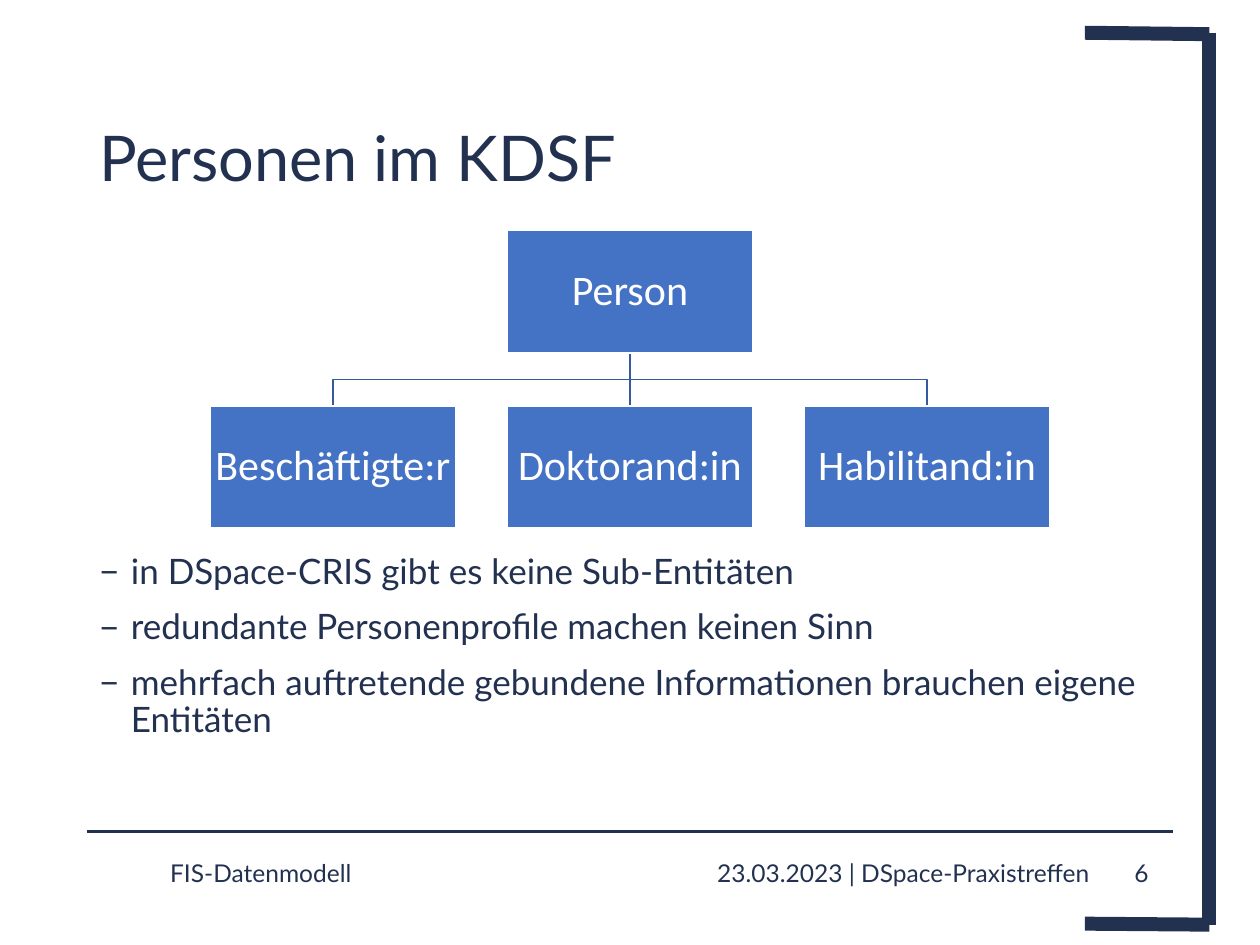
import pptx
import pptx.util
import pptx.dml.color
import pptx.enum.shapes
import pptx.enum.text
import pptx.oxml.ns
import lxml.etree
from dataclasses import dataclass

Cm = pptx.util.Cm
Pt = pptx.util.Pt
RGB = pptx.dml.color.RGBColor.from_string
qn = pptx.oxml.ns.qn
ALIGN = pptx.enum.text.PP_ALIGN
ANCHOR = pptx.enum.text.MSO_ANCHOR


@dataclass(frozen=True)
class Theme:
    navy: str = "233150"
    box: str = "4472C4"
    branch: str = "365B9D"
    white: str = "FFFFFF"
    font: str = "Lato"
    box_font: str = "Calibri"
    title: int = 36
    box_text: int = 24
    body: int = 20
    footer: int = 14


theme = Theme()
prs = pptx.Presentation()
prs.slide_width = Cm(25.4)
prs.slide_height = Cm(19.05)
s = prs.slides.add_slide(prs.slide_layouts[6])


def add_line(x1, y1, x2, y2, color, width):
    ln = s.shapes.add_connector(
        pptx.enum.shapes.MSO_CONNECTOR.STRAIGHT, Cm(x1), Cm(y1), Cm(x2), Cm(y2))
    ln.line.color.rgb = RGB(color)
    ln.line.width = Pt(width)
    lxml.etree.SubElement(ln._element.spPr, qn("a:effectLst"))


def add_run(p, text, size, font=theme.font, color=theme.navy):
    r = p.add_run()
    r.text = text
    r.font.size = Pt(size)
    r.font.name = font
    r.font.color.rgb = RGB(color)


for x1, y1, x2, y2 in [(24.38, 0.66, 24.38, 18.64),
                       (21.87, 0.66, 24.38, 0.69),
                       (21.87, 18.62, 24.38, 18.64)]:
    add_line(x1, y1, x2, y2, theme.navy, 8)
add_line(1.75, 16.76, 23.65, 16.76, theme.navy, 2)

tf = s.shapes.add_textbox(Cm(1.75), Cm(1.04), Cm(21.9), Cm(3.02)).text_frame
tf.word_wrap = True
tf.vertical_anchor = ANCHOR.BOTTOM
p = tf.paragraphs[0]
p.line_spacing = 0.9
add_run(p, "Personen im KDSF", theme.title)

points = ["in DSpace-CRIS gibt es keine Sub-Entitäten",
          "redundante Personenprofile machen keinen Sinn",
          "mehrfach auftretende gebundene Informationen brauchen eigene Entitäten"]
tf = s.shapes.add_textbox(Cm(1.75), Cm(11.05), Cm(21.9), Cm(5.49)).text_frame
tf.word_wrap = True
for i, text in enumerate(points):
    p = tf.add_paragraph() if i else tf.paragraphs[0]
    pPr = p._p.get_or_add_pPr()
    pPr.set("marL", str(Cm(0.64)))
    pPr.set("indent", str(-Cm(0.64)))
    lxml.etree.SubElement(pPr, qn("a:buFont"), typeface=theme.font)
    lxml.etree.SubElement(pPr, qn("a:buChar"), char="−")
    p.line_spacing = 0.9
    if i:
        p.space_before = Pt(10)
    add_run(p, text, theme.body)

footers = [("23.03.2023 | DSpace-Praxistreffen", 13.08, 9.14, ALIGN.RIGHT),
           ("FIS-Datenmodell", 3.18, 9.17, ALIGN.LEFT),
           ("6", 22.5, 1.02, ALIGN.CENTER)]
for text, x, w, align in footers:
    tf = s.shapes.add_textbox(Cm(x), Cm(17.09), Cm(w), Cm(1.02)).text_frame
    tf.word_wrap = True
    tf.vertical_anchor = ANCHOR.MIDDLE
    p = tf.paragraphs[0]
    p.alignment = align
    add_run(p, text, theme.footer)

center, step = 12.7, 5.99
box_w, box_h = 4.95, 2.46
root_y, child_y = 4.65, 8.18
branch_y, bend_y = 7.14, 7.65

for x in (center + step, center - step):
    fb = s.shapes.build_freeform(Cm(center), Cm(branch_y))
    fb.add_line_segments([(Cm(center), Cm(bend_y)), (Cm(x), Cm(bend_y)),
                          (Cm(x), Cm(child_y))], close=False)
    sp = fb.convert_to_shape()
    sp.shadow.inherit = False
    sp.fill.background()
    sp.line.color.rgb = RGB(theme.branch)
    sp.line.width = Pt(1)
add_line(center, branch_y, center, child_y, theme.branch, 1)

boxes = [("Person", 0, root_y), ("Beschäftigte:r", -1, child_y),
         ("Doktorand:in", 0, child_y), ("Habilitand:in", 1, child_y)]
for text, col, y in boxes:
    sp = s.shapes.add_shape(
        pptx.enum.shapes.MSO_SHAPE.RECTANGLE,
        Cm(center + col * step - box_w / 2), Cm(y), Cm(box_w), Cm(box_h))
    sp.shadow.inherit = False
    sp.fill.solid()
    sp.fill.fore_color.rgb = RGB(theme.box)
    sp.line.color.rgb = RGB(theme.white)
    sp.line.width = Pt(1)
    tf = sp.text_frame
    tf.word_wrap = True
    tf.vertical_anchor = ANCHOR.MIDDLE
    tf.margin_left = tf.margin_right = tf.margin_top = tf.margin_bottom = Cm(0.05)
    p = tf.paragraphs[0]
    p.alignment = ALIGN.CENTER
    p.line_spacing = 0.9
    add_run(p, text, theme.box_text, theme.box_font, theme.white)

prs.save("out.pptx")
